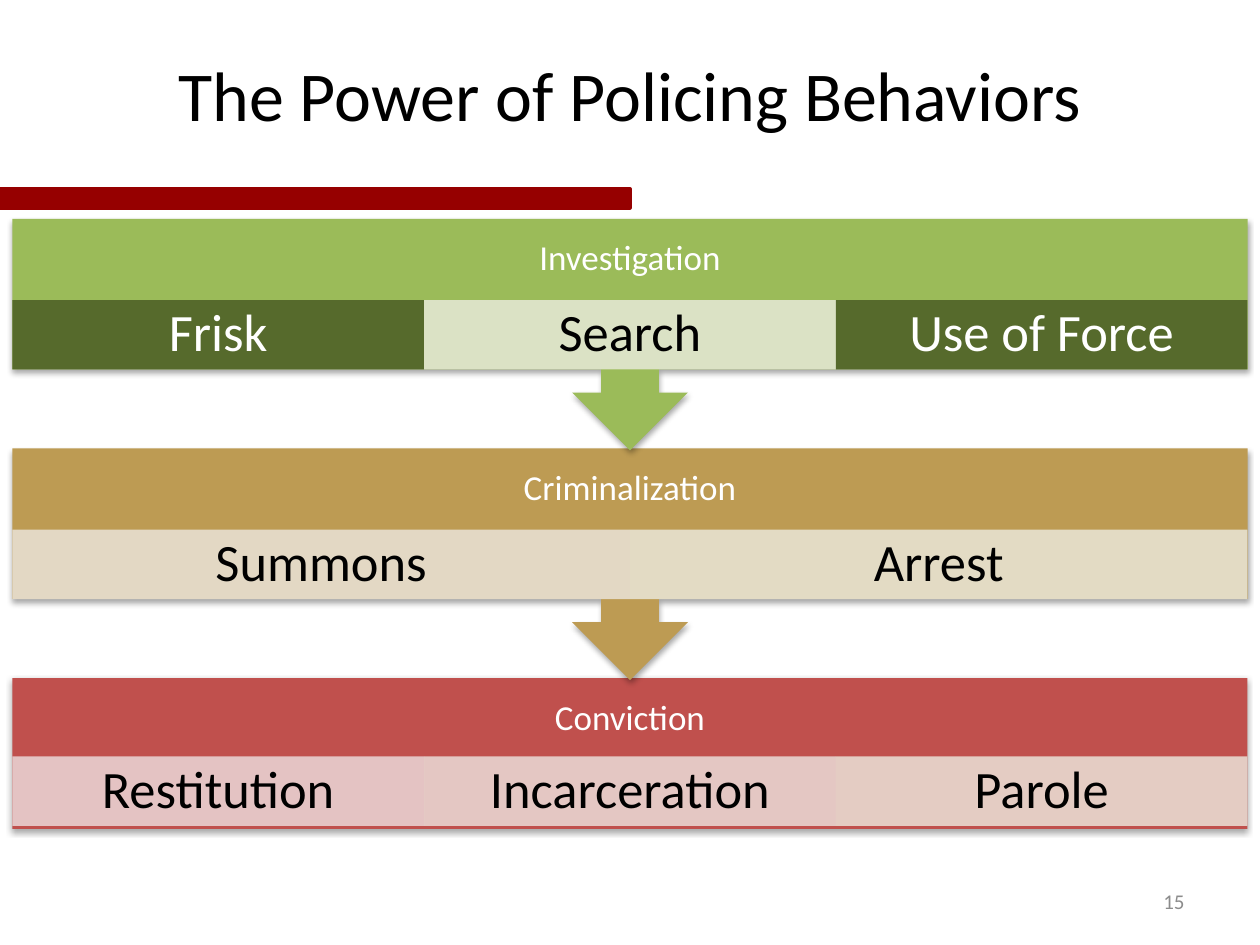
import pptx
import pptx.util
import pptx.dml.color
import pptx.enum.shapes
import pptx.enum.text
import pptx.oxml
import pptx.oxml.ns
from dataclasses import dataclass
from lxml import etree

Cm = pptx.util.Cm
Pt = pptx.util.Pt
Shapes = pptx.enum.shapes.MSO_SHAPE
Align = pptx.enum.text.PP_ALIGN


@dataclass(frozen=True)
class Theme:
    font: str = "Calibri"
    title_size: int = 40
    header_size: int = 20
    step_size: int = 30
    number_size: int = 12
    dark: str = "000000"
    light: str = "FFFFFF"
    muted: str = "8C8C8C"
    accent: str = "960000"
    step_opacity: int = 90
    shadow_opacity: int = 35


THEME = Theme()
TITLE = "The Power of Policing Behaviors"
SLIDE_NUMBER = "15"
STAGES = [
    ("Investigation", "9BBB59", [
        ("Frisk", "4F6228", THEME.light),
        ("Search", "E3E7D1", THEME.dark),
        ("Use of Force", "4F6228", THEME.light),
    ]),
    ("Criminalization", "BD9B53", [
        ("Summons", "E8DFD1", THEME.dark),
        ("Arrest", "E8E3D1", THEME.dark),
    ]),
    ("Conviction", "C0504D", [
        ("Restitution", "E8D0D0", THEME.dark),
        ("Incarceration", "E8D5D0", THEME.dark),
        ("Parole", "E8DAD0", THEME.dark),
    ]),
]

STAGE_LEFT, STAGE_TOP, STAGE_WIDTH, STAGE_PITCH = 0.25, 4.41, 24.9, 4.63
CALLOUT_HEIGHT, LAST_HEIGHT = 4.67, 3.04
HEADER_HEIGHT, STEP_HEIGHT = 1.64, 1.4
CALLOUT_STEP_OFFSET, LAST_STEP_OFFSET = 1.64, 1.58


def rgb(color):
    return pptx.dml.color.RGBColor.from_string(color)


def add_alpha(color_element, percent):
    alpha = etree.SubElement(color_element, pptx.oxml.ns.qn("a:alpha"))
    alpha.set("val", str(percent * 1000))


def add_block(slide, kind, box, color, opacity=100):
    shape = slide.shapes.add_shape(kind, *map(Cm, box))
    shape.shadow.inherit = False
    shape.fill.solid()
    shape.fill.fore_color.rgb = rgb(color)
    shape.line.fill.background()
    if opacity < 100:
        color_element = shape.fill._xPr.find(".//" + pptx.oxml.ns.qn("a:srgbClr"))
        add_alpha(color_element, opacity)
    return shape


def add_shadow(shape):
    effects = shape._element.spPr.find(pptx.oxml.ns.qn("a:effectLst"))
    shadow = etree.SubElement(effects, pptx.oxml.ns.qn("a:outerShdw"))
    for name, value in (("blurRad", Pt(3.1)), ("dist", Pt(1.8)),
                        ("dir", 90 * 60000), ("rotWithShape", 0)):
        shadow.set(name, str(value))
    color_element = etree.SubElement(shadow, pptx.oxml.ns.qn("a:srgbClr"))
    color_element.set("val", THEME.dark)
    add_alpha(color_element, THEME.shadow_opacity)


def write(shape, text, size, color, align=Align.CENTER, spacing=0.9, insets=(0.25, 0.13)):
    frame = shape.text_frame
    frame.word_wrap = True
    frame.vertical_anchor = pptx.enum.text.MSO_ANCHOR.MIDDLE
    frame.margin_left = frame.margin_right = Cm(insets[0])
    frame.margin_top = frame.margin_bottom = Cm(insets[1])
    paragraph = frame.paragraphs[0]
    paragraph.text = text
    paragraph.alignment = align
    paragraph.line_spacing = spacing
    paragraph.font.name = THEME.font
    paragraph.font.size = Pt(size)
    paragraph.font.color.rgb = rgb(color)


def add_text(slide, box, *content, **options):
    write(slide.shapes.add_textbox(*map(Cm, box)), *content, **options)


def add_stage(slide, index, header, color, steps):
    is_last = index == len(STAGES) - 1
    top = STAGE_TOP + index * STAGE_PITCH
    kind = Shapes.RECTANGLE if is_last else Shapes.UP_ARROW_CALLOUT
    height = LAST_HEIGHT if is_last else CALLOUT_HEIGHT
    panel = add_block(slide, kind, (STAGE_LEFT, top, STAGE_WIDTH, height), color)
    panel.rotation = 0 if is_last else 180
    add_shadow(panel)
    add_text(slide, (STAGE_LEFT, top, STAGE_WIDTH, HEADER_HEIGHT),
             header, THEME.header_size, THEME.light, insets=(0.4, 0.4))

    step_top = top + (LAST_STEP_OFFSET if is_last else CALLOUT_STEP_OFFSET)
    step_width = STAGE_WIDTH / len(steps)
    for column, (text, fill, text_color) in enumerate(steps):
        box = (STAGE_LEFT + column * step_width, step_top, step_width, STEP_HEIGHT)
        step = add_block(slide, Shapes.RECTANGLE, box, fill, THEME.step_opacity)
        write(step, text, THEME.step_size, text_color, insets=(0.58, 0.1))


def main():
    presentation = pptx.Presentation()
    presentation.slide_width, presentation.slide_height = Cm(25.4), Cm(19.05)
    slide = presentation.slides.add_slide(presentation.slide_layouts[6])

    for index, stage in reversed(list(enumerate(STAGES))):
        add_stage(slide, index, *stage)

    bar = add_block(slide, Shapes.RECTANGLE, (0, 3.81, 12.7, 0.38), THEME.accent)
    bar.line.color.rgb = rgb(THEME.accent)
    bar.line.width = Pt(2)
    add_text(slide, (18.2, 17.66, 5.93, 1.01), SLIDE_NUMBER, THEME.number_size,
             THEME.muted, align=Align.RIGHT, spacing=1.0)
    add_text(slide, (1.27, 0.43, 22.86, 3.18), TITLE, THEME.title_size,
             THEME.dark, spacing=Pt(40))
    presentation.save("out.pptx")


if __name__ == "__main__":
    main()
